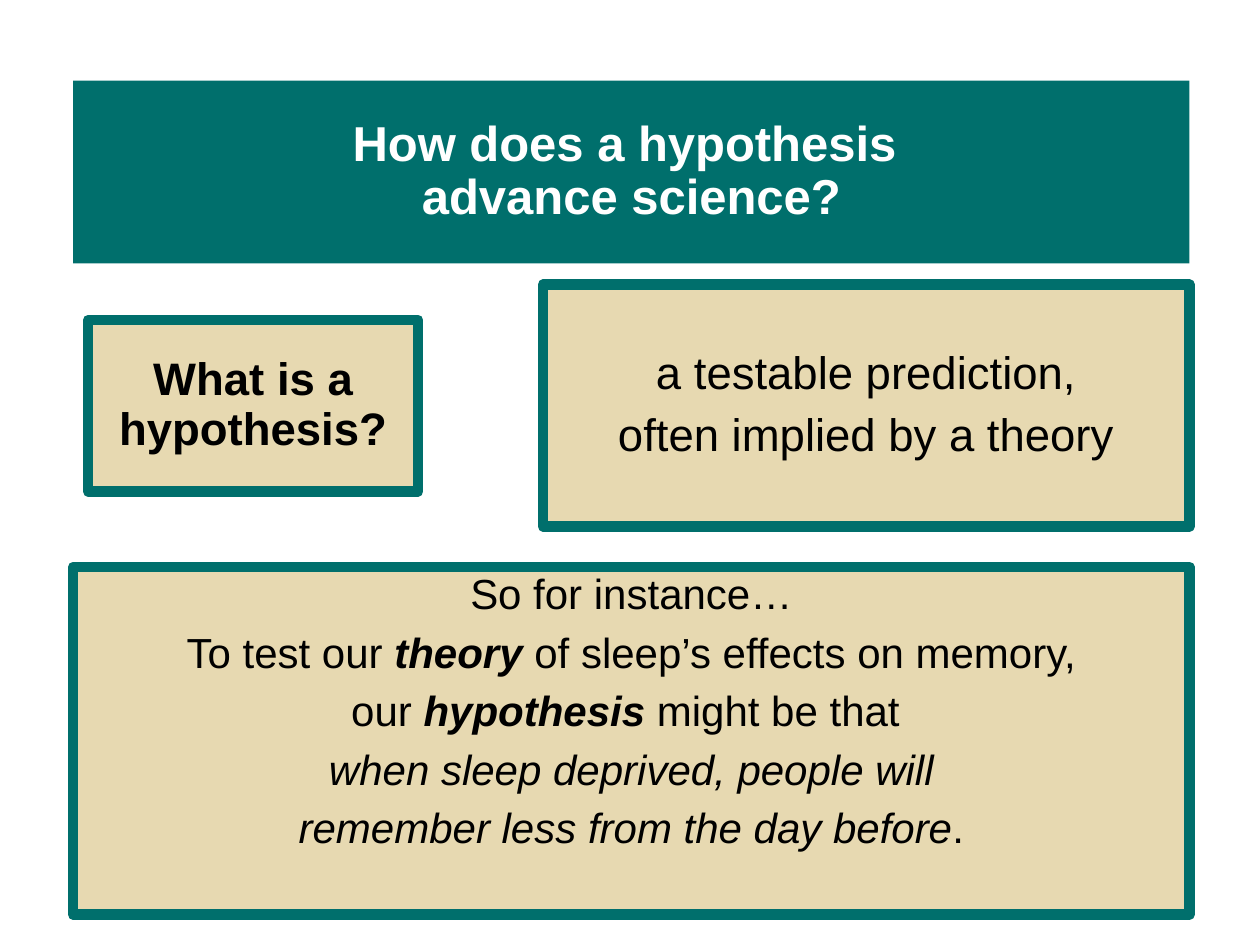
from lxml.etree import SubElement
from pptx import Presentation
from pptx.dml.color import RGBColor
from pptx.enum.text import MSO_ANCHOR, MSO_AUTO_SIZE, PP_ALIGN
from pptx.oxml.ns import qn
from pptx.util import Pt

TEAL, SAND, BLACK, WHITE = "006F6C", "E7D9B1", "000000", "FFFFFF"
COMPARISON_LAYOUT = 4
LEFT, WIDTH = 41.8, 637.9


def paint(color_format, color):
    color_format.rgb = RGBColor.from_string(color)


def place(holder, left, top, width, height, fill, border=None):
    holder.left, holder.top = Pt(left), Pt(top)
    holder.width, holder.height = Pt(width), Pt(height)
    holder.fill.solid()
    paint(holder.fill.fore_color, fill)
    if border:
        holder.line.width = Pt(6)
        paint(holder.line.color, border)


def remove_bullet(paragraph):
    properties = paragraph._p.get_or_add_pPr()
    properties.set("marL", "0")
    properties.set("indent", "0")
    SubElement(properties, qn("a:buNone"))


def write(holder, paragraphs, size, color=BLACK, bold=False, before=7.5,
          anchor=MSO_ANCHOR.MIDDLE):
    """Fill a placeholder; each paragraph lists (text, style) with style of "b" and "i".

    A newline in a text becomes a line break.
    """
    frame = holder.text_frame
    frame.word_wrap = True
    frame.auto_size = MSO_AUTO_SIZE.NONE
    frame.vertical_anchor = anchor
    for index, pieces in enumerate(paragraphs):
        paragraph = frame.add_paragraph() if index else frame.paragraphs[0]
        paragraph.alignment = PP_ALIGN.CENTER
        paragraph.line_spacing = 0.9
        paragraph.space_before = Pt(before)
        remove_bullet(paragraph)
        for text, style in pieces:
            for number, line in enumerate(text.split("\n")):
                if number:
                    paragraph.add_line_break()
                run = paragraph.add_run()
                run.text = line
                run.font.name = "Arial"
                run.font.size = Pt(size)
                run.font.bold = bold or "b" in style
                run.font.italic = "i" in style
                paint(run.font.color, color)


def main():
    presentation = Presentation()
    presentation.slide_width, presentation.slide_height = Pt(720), Pt(540)
    slide = presentation.slides.add_slide(
        presentation.slide_layouts[COMPARISON_LAYOUT])
    title, question, answer, example, spare = slide.placeholders
    spare.element.getparent().remove(spare.element)

    place(title, LEFT, 46.1, WIDTH, 104.4, TEAL)
    write(title, [[("How does a hypothesis \nadvance science?", "")]],
          size=28, color=WHITE, bold=True, before=0)

    place(question, 50.4, 182.9, 188.6, 97.9, SAND, border=TEAL)
    write(question, [[("What is a hypothesis?", "")]], size=26, bold=True)

    place(answer, 310.3, 162.7, 369.4, 138.2, SAND, border=TEAL)
    write(answer, [[("a testable prediction,", "")],
                   [("often implied by a theory", "")]], size=26)

    place(example, LEFT, 324, WIDTH, 198.7, SAND, border=TEAL)
    write(example, [
        [("So for instance…", "")],
        [("To test our ", ""), ("theory ", "bi"),
         ("of sleep’s effects on memory,", "")],
        [("our ", ""), ("hypothesis", "bi"), (" might be that ", "")],
        [("when sleep deprived, people will", "i")],
        [("remember less from the day before", "i"), (".", "")],
    ], size=24, anchor=MSO_ANCHOR.TOP)

    presentation.save("out.pptx")


if __name__ == "__main__":
    main()
